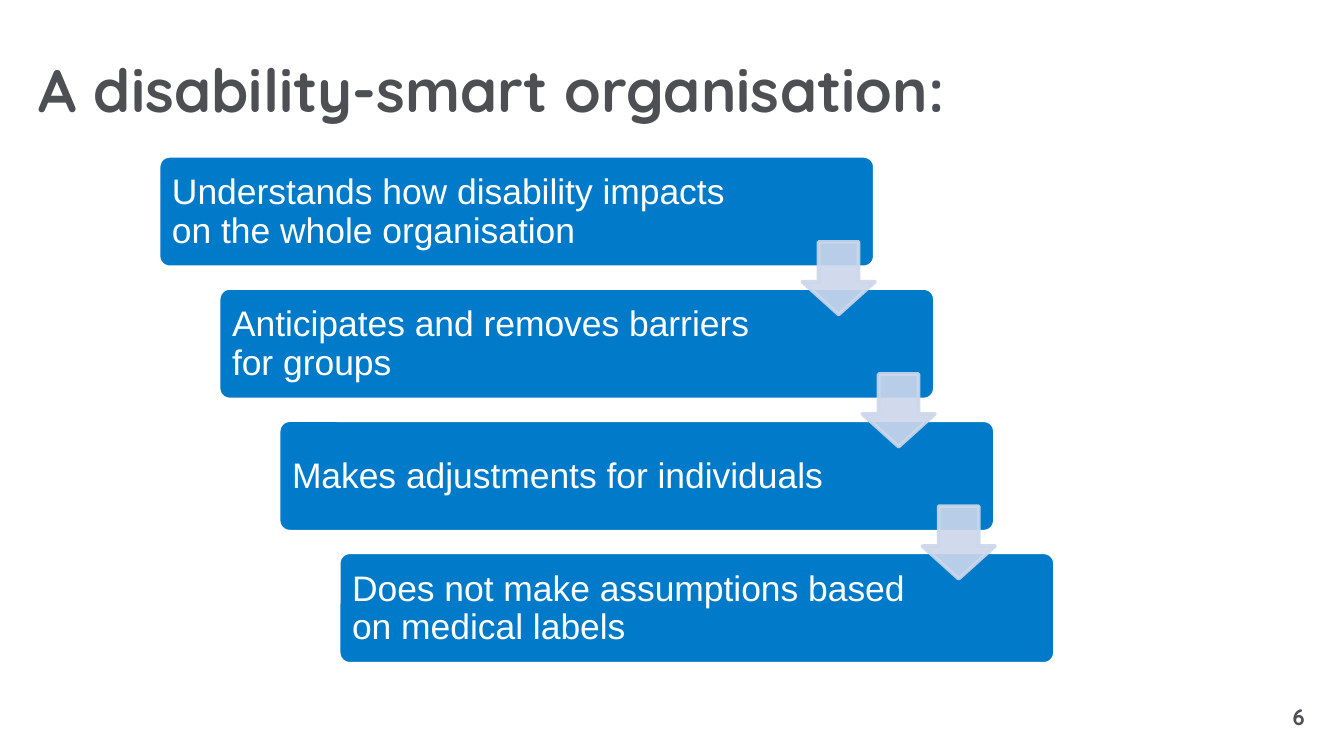
from pptx import Presentation
from pptx.dml.color import RGBColor
from pptx.enum.shapes import MSO_SHAPE
from pptx.enum.text import MSO_ANCHOR, PP_ALIGN
from pptx.oxml.ns import qn
from pptx.util import Inches, Pt
from lxml.etree import SubElement

BLUE, PALE, GREY, WHITE = "007AC9", "CCD7EB", "4D4F53", "FFFFFF"


def paint(color_format, hex_color):
    color_format.rgb = RGBColor.from_string(hex_color)


def add_text(box, text, insets, font_name, size, color, bold=False):
    """Add a wrapped one-paragraph text box and return its text frame."""
    frame = slide.shapes.add_textbox(*[Inches(value) for value in box]).text_frame
    frame.word_wrap = True
    frame.margin_left, frame.margin_top, frame.margin_right, frame.margin_bottom = [
        Inches(value) for value in insets]
    frame.text = text
    font = frame.paragraphs[0].runs[0].font
    font.name, font.size, font.bold = font_name, Pt(size), bold
    paint(font.color, color)
    return frame


# Widescreen slide, 16:9
presentation = Presentation()
presentation.slide_width = Inches(10)
presentation.slide_height = Inches(10 * 9 / 16)
slide = presentation.slides.add_slide(presentation.slide_layouts[6])

# Slide number and title
number = add_text((7.38, 5.18, 2.33, 0.4), "6", (0.1, 0.05, 0, 0.05),
                  "Quicksand", 12, GREY, bold=True)
number.paragraphs[0].alignment = PP_ALIGN.RIGHT
title = add_text((0.29, 0.45, 9.42, 0.67), "A disability-smart organisation:",
                 (0, 0, 0.1, 0.05), "Quicksand", 32, GREY, bold=True)
title.paragraphs[0].line_spacing = 0.9

# Staircase of steps, each shifted right and down by the same amount
steps = [
    "Understands how disability impacts on the whole organisation",
    "Anticipates and removes barriers for groups",
    "Makes adjustments for individuals",
    "Does not make assumptions based on medical labels",
]
shift_x, shift_y = 1.34 / 3, 2.95 / 3
for index, step in enumerate(steps):
    left, top = 1.18 + index * shift_x, 1.16 + index * shift_y
    bar = slide.shapes.add_shape(MSO_SHAPE.ROUNDED_RECTANGLE, Inches(left),
                                 Inches(top), Inches(5.33), Inches(0.83))
    bar.adjustments[0] = 0.1
    bar.shadow.inherit = False
    bar.fill.solid()
    paint(bar.fill.fore_color, BLUE)
    paint(bar.line.color, WHITE)
    bar.line.width = Pt(2)

    label = add_text((left + 0.02, top + 0.03, 4.3, 0.78), step, [0.08] * 4,
                     "Arial", 19, WHITE)
    label.vertical_anchor = MSO_ANCHOR.MIDDLE
    label.paragraphs[0].line_spacing = 0.9

# Translucent arrows linking each step to the next
for index in range(len(steps) - 1):
    arrow = slide.shapes.add_shape(
        MSO_SHAPE.DOWN_ARROW, Inches(5.97 + index * shift_x),
        Inches(1.8 + index * shift_y), Inches(0.54), Inches(0.54))
    arrow.adjustments[0], arrow.adjustments[1] = 0.55, 0.45
    arrow.shadow.inherit = False
    arrow.fill.solid()
    paint(arrow.fill.fore_color, PALE)
    paint(arrow.line.color, PALE)
    arrow.line.width = Pt(2)
    for color in arrow.element.spPr.iter(qn("a:srgbClr")):
        SubElement(color, qn("a:alpha")).set("val", "90000")

presentation.save("out.pptx")
